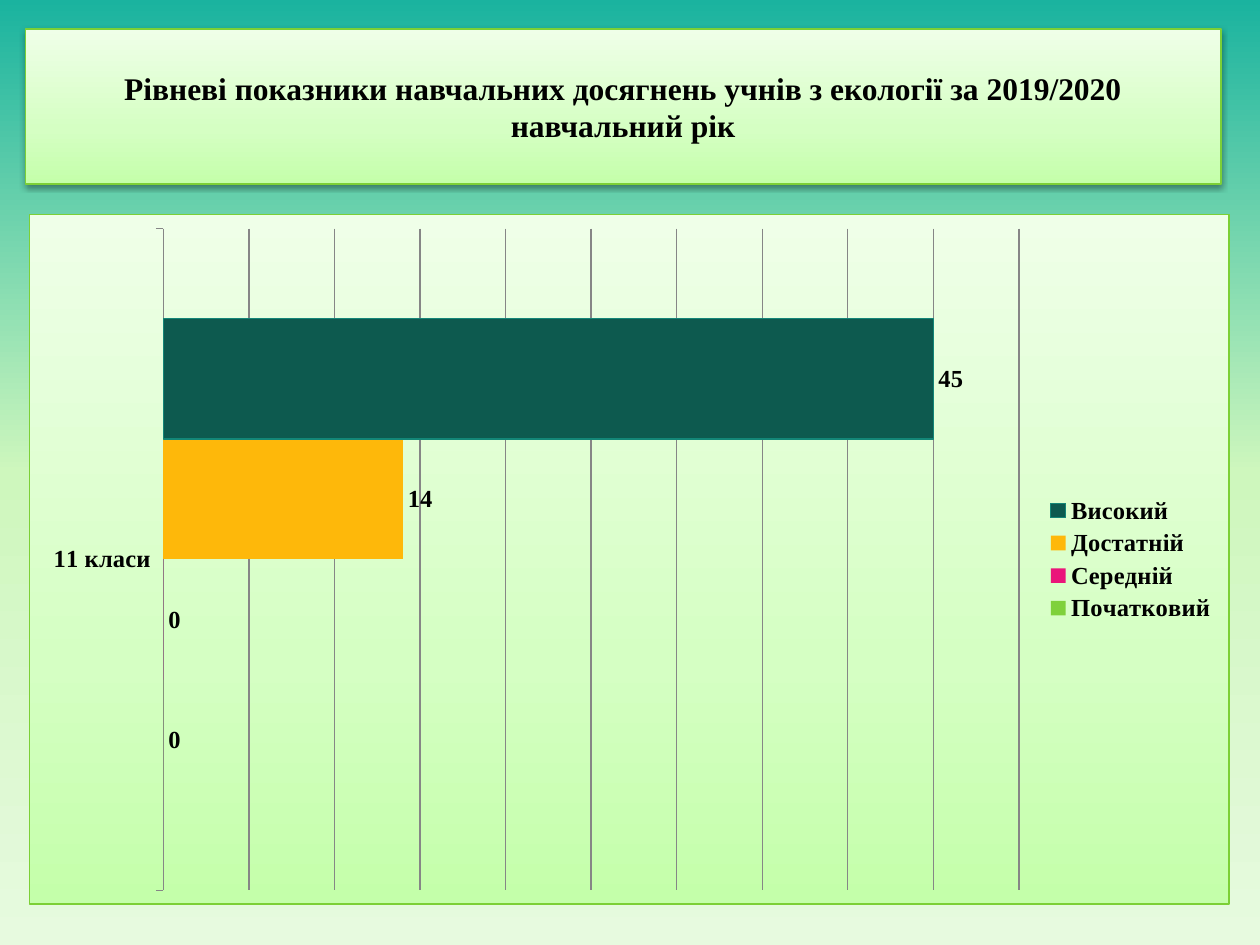
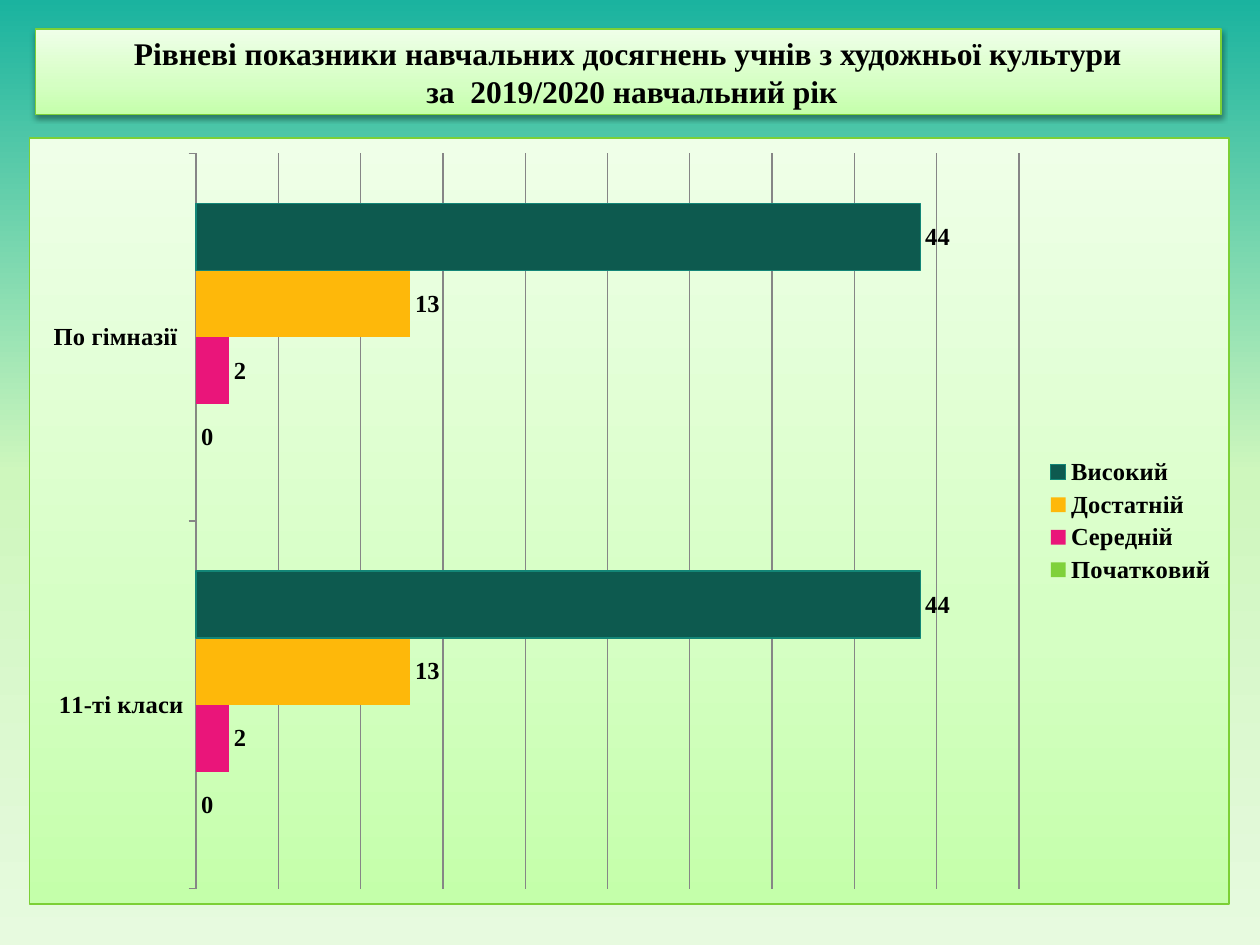
import pptx
import pptx.chart.data
import pptx.dml.color
import pptx.enum.chart
import pptx.enum.text
import pptx.oxml
import pptx.oxml.ns
import pptx.util
from pptx.util import Inches

FONT = "Times New Roman"
BLACK = "000000"
BORDER = "7CD036"
GRID = "868686"
BACKGROUND_STOPS = [(0, "1AB39F"), (50, "CEF7BD"), (100, "E7FADF")]
PANEL_STOPS = [(0, "C4FFAA"), (35, "D5FFC3"), (100, "EFFFE8")]
LEVEL_COLORS = {
    "Початковий": "7FD13B",
    "Середній": "EA157A",
    "Достатній": "FEB80A",
    "Високий": "0D5A4F",
}
TOP_LEVEL = "Високий"
TOP_LEVEL_LINE = "138677"


def color(hex_code):
    return pptx.dml.color.RGBColor.from_string(hex_code)


def parse(tag, attributes="", content=""):
    namespaces = pptx.oxml.ns.nsdecls("a", "c")
    return pptx.oxml.parse_xml(f"<{tag} {namespaces} {attributes}>{content}</{tag}>")


def gradient(stops, angle):
    stop_list = "".join(
        f'<a:gs pos="{position * 1000}"><a:srgbClr val="{hex_code}"/></a:gs>'
        for position, hex_code in stops
    )
    return parse(
        "a:gradFill",
        'rotWithShape="1"',
        f'<a:gsLst>{stop_list}</a:gsLst><a:lin ang="{angle * 60000}" scaled="0"/>',
    )


def replace_solid_fill(properties, stops, angle):
    solid = properties.find(pptx.oxml.ns.qn("a:solidFill"))
    properties.replace(solid, gradient(stops, angle))


def set_line(line, hex_code):
    line.color.rgb = color(hex_code)
    line.width = pptx.util.Pt(0.75)


def set_font(font, size, name=FONT, bold=True):
    font.name = name
    font.size = pptx.util.Pt(size)
    font.bold = bold
    font.color.rgb = color(BLACK)


def set_background(master):
    master.background.fill.solid()
    properties = master.element.find(".//" + pptx.oxml.ns.qn("p:bgPr"))
    replace_solid_fill(properties, BACKGROUND_STOPS, 90)


def add_shadow(shape):
    shape.shadow.inherit = False
    effects = shape.element.spPr.find(pptx.oxml.ns.qn("a:effectLst"))
    effects.append(parse(
        "a:outerShdw",
        'blurRad="40000" dist="20000" dir="5400000" rotWithShape="0"',
        '<a:srgbClr val="000000"><a:alpha val="38000"/></a:srgbClr>',
    ))


def format_title(title, text, left, width, height):
    title.left, title.top = Inches(left), Inches(0.23)
    title.width, title.height = Inches(width), Inches(height)
    title.fill.solid()
    replace_solid_fill(title.element.spPr, PANEL_STOPS, 270)
    set_line(title.line, BORDER)
    add_shadow(title)
    frame = title.text_frame
    frame.word_wrap = True
    frame.auto_size = pptx.enum.text.MSO_AUTO_SIZE.NONE
    frame.vertical_anchor = pptx.enum.text.MSO_ANCHOR.MIDDLE
    paragraph = frame.paragraphs[0]
    paragraph.text = text
    paragraph.alignment = pptx.enum.text.PP_ALIGN.CENTER
    set_font(paragraph.font, 18)


def format_panel(chart):
    properties = parse("c:spPr")
    properties.append(gradient(PANEL_STOPS, 270))
    properties.append(parse(
        "a:ln", 'w="9525"',
        f'<a:solidFill><a:srgbClr val="{BORDER}"/></a:solidFill>',
    ))
    chart.element.find(pptx.oxml.ns.qn("c:chart")).addnext(properties)


def format_axes(chart):
    category_axis = chart.category_axis
    category_axis.major_tick_mark = pptx.enum.chart.XL_TICK_MARK.OUTSIDE
    set_font(category_axis.tick_labels.font, 14)
    set_line(category_axis.format.line, GRID)
    value_axis = chart.value_axis
    value_axis.minimum_scale = 0
    value_axis.maximum_scale = 50
    value_axis.major_unit = 5
    value_axis.has_major_gridlines = True
    set_line(value_axis.major_gridlines.format.line, GRID)
    value_axis.visible = False


def format_series(series):
    series.invert_if_negative = False
    series.format.fill.solid()
    series.format.fill.fore_color.rgb = color(LEVEL_COLORS[series.name])
    if series.name == TOP_LEVEL:
        set_line(series.format.line, TOP_LEVEL_LINE)
    labels = series.data_labels
    labels.show_value = True
    labels.position = pptx.enum.chart.XL_LABEL_POSITION.OUTSIDE_END
    set_font(labels.font, 14)


def add_level_chart(slide, top, height, categories, level_counts):
    data = pptx.chart.data.CategoryChartData()
    data.categories = categories
    for level, count in zip(LEVEL_COLORS, level_counts):
        data.add_series(level, [count] * len(categories))
    chart = slide.shapes.add_chart(
        pptx.enum.chart.XL_CHART_TYPE.BAR_CLUSTERED,
        Inches(0.23), Inches(top), Inches(9.53), Inches(height), data,
    ).chart
    chart.has_title = False
    set_font(chart.font, 10, "Calibri", False)
    format_panel(chart)
    format_axes(chart)
    plot = chart.plots[0]
    plot.gap_width = 150
    plot.vary_by_categories = False
    for series in plot.series:
        format_series(series)
    chart.has_legend = True
    chart.legend.position = pptx.enum.chart.XL_LEGEND_POSITION.RIGHT
    chart.legend.include_in_layout = False
    set_font(chart.legend.font, 14)


def add_titled_slide(presentation, text, left, width, height):
    slide = presentation.slides.add_slide(presentation.slide_layouts[0])
    subtitle = slide.placeholders[1].element
    subtitle.getparent().remove(subtitle)
    format_title(slide.shapes.title, text, left, width, height)
    return slide


def main():
    presentation = pptx.Presentation()
    presentation.slide_width = Inches(10)
    presentation.slide_height = Inches(7.5)
    set_background(presentation.slide_master)

    ecology = add_titled_slide(
        presentation,
        "Рівневі показники навчальних досягнень учнів з екології за 2019/2020 навчальний рік",
        0.2, 9.49, 1.23,
    )
    add_level_chart(ecology, 1.7, 5.48, ["11 класи"], [0, 0, 14, 45])

    art_culture = add_titled_slide(
        presentation,
        "Рівневі показники навчальних досягнень учнів з художньої культури\n"
        " за  2019/2020 навчальний рік",
        0.28, 9.41, 0.68,
    )
    add_level_chart(
        art_culture, 1.09, 6.09, ["11-ті класи", "По гімназії "], [0, 2, 13, 44]
    )

    presentation.save("out.pptx")


if __name__ == "__main__":
    main()
